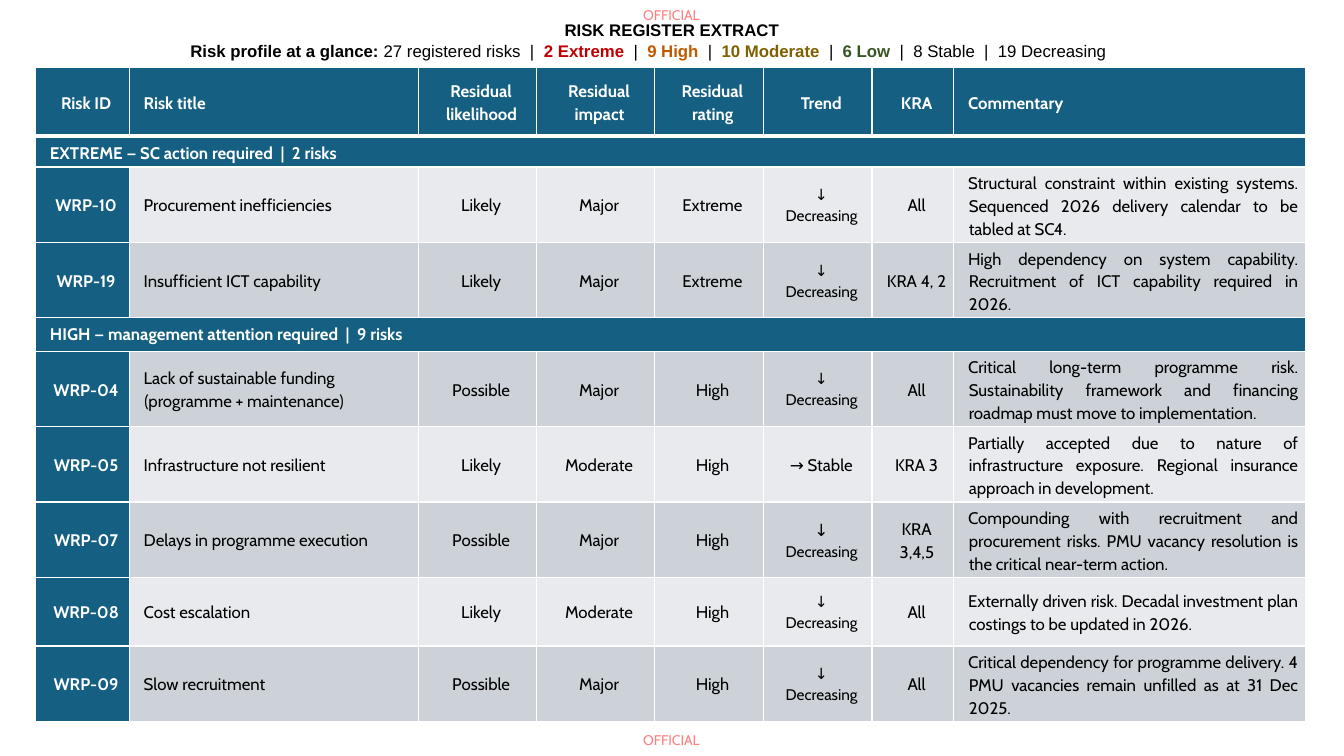
from lxml import etree
from pptx import Presentation
from pptx.dml.color import RGBColor
from pptx.enum import text as t
from pptx.oxml import ns
from pptx.util import Pt

TEAL, PALE, GREY = "156082", "E8EAED", "CCD2D8"
WHITE, BLACK = "FFFFFF", "000000"
MID, LEFT, FULL = t.PP_ALIGN.CENTER, t.PP_ALIGN.LEFT, t.PP_ALIGN.JUSTIFY

WIDTHS = [67, 206.6, 84.2, 84.2, 77.8, 77.8, 58.3, 251.3]
DOWN = "↓ Decreasing"
ROWS = [
    ["Risk ID", "Risk title", "Residual likelihood", "Residual impact",
     "Residual rating", "Trend", "KRA", "Commentary"],
    ["EXTREME — SC action required  |  2 risks"],
    ["WRP-10", "Procurement inefficiencies", "Likely", "Major", "Extreme", DOWN, "All",
     "Structural constraint within existing systems. Sequenced 2026 delivery calendar "
     "to be tabled at SC4."],
    ["WRP-19", "Insufficient ICT capability", "Likely", "Major", "Extreme", DOWN, "KRA 4, 2",
     "High dependency on system capability. Recruitment of ICT capability required in 2026."],
    ["HIGH — management attention required  |  9 risks"],
    ["WRP-04", "Lack of sustainable funding (programme + maintenance)", "Possible", "Major",
     "High", DOWN, "All",
     "Critical long-term programme risk. Sustainability framework and financing roadmap "
     "must move to implementation."],
    ["WRP-05", "Infrastructure not resilient", "Likely", "Moderate", "High", "→ Stable", "KRA 3",
     "Partially accepted due to nature of infrastructure exposure. Regional insurance "
     "approach in development."],
    ["WRP-07", "Delays in programme execution", "Possible", "Major", "High", DOWN, "KRA 3,4,5",
     "Compounding with recruitment and procurement risks. PMU vacancy resolution is the "
     "critical near-term action."],
    ["WRP-08", "Cost escalation", "Likely", "Moderate", "High", DOWN, "All",
     "Externally driven risk. Decadal investment plan costings to be updated in 2026."],
    ["WRP-09", "Slow recruitment", "Possible", "Major", "High", DOWN, "All",
     "Critical dependency for programme delivery. 4 PMU vacancies remain unfilled as at "
     "31 Dec 2025."],
]
BANDS = {1: 21.6, 4: 23.8}
PROFILE = [
    ("Risk profile at a glance: ", BLACK, True),
    ("27 registered risks  |  ", BLACK, False),
    ("2 Extreme  ", "C00000", True), ("|  ", BLACK, False),
    ("9 High  ", "C05A00", True), ("|  ", BLACK, False),
    ("10 Moderate  ", "7F6000", True), ("|  ", BLACK, False),
    ("6 Low  ", "375623", True),
    ("|  8 Stable  |  19 Decreasing", BLACK, False),
]


def hue(code):
    return RGBColor.from_string(code)


def write(para, words, size=12, font="Cabin", color=BLACK, bold=False, alpha=None):
    run = para.add_run()
    run.text = words
    face = run.font
    face.size, face.name, face.bold = Pt(size), font, bold
    face.color.rgb = hue(color)
    if alpha:
        tint = run._r.find(".//" + ns.qn("a:srgbClr"))
        etree.SubElement(tint, ns.qn("a:alpha"), val=str(alpha * 1000))


class Board:
    def __init__(self, slide):
        self.slide = slide

    def box(self, x, y, w, h, pad=(0, 0), wrap=False):
        frame = self.slide.shapes.add_textbox(Pt(x), Pt(y), Pt(w), Pt(h)).text_frame
        frame.margin_left = frame.margin_right = Pt(pad[0])
        frame.margin_top = frame.margin_bottom = Pt(pad[1])
        frame.word_wrap = wrap
        frame.auto_size = t.MSO_AUTO_SIZE.SHAPE_TO_FIT_TEXT
        return frame

    def mark(self, y):
        frame = self.box(459.4, y, 43.2, 12.2)
        write(frame.paragraphs[0], "OFFICIAL", size=10, color="FF0000", alpha=50)

    def title(self):
        frame = self.box(128.9, 10.8, 702, 36, pad=(7.2, 3.6), wrap=True)
        frame.vertical_anchor = t.MSO_ANCHOR.MIDDLE
        head = frame.paragraphs[0]
        head.alignment = MID
        write(head, "RISK REGISTER EXTRACT", font="Arial", bold=True)
        line = frame.add_paragraph()
        line.alignment = LEFT
        for words, color, bold in PROFILE:
            write(line, words, font="Arial", color=color, bold=bold)

    def edges(self, cell, row):
        props = cell._tc.get_or_add_tcPr()
        for side in "LRTB":
            thick = (row, side) in ((0, "B"), (1, "T"))
            line = etree.SubElement(props, ns.qn("a:ln" + side),
                                    w=str(Pt(3 if thick else 1)))
            fill = etree.SubElement(line, ns.qn("a:solidFill"))
            etree.SubElement(fill, ns.qn("a:srgbClr"), val=WHITE)

    def cell(self, cell, row, col, words):
        band = row in BANDS
        dark = band or row == 0 or col == 0
        cell.margin_left = cell.margin_right = Pt(5)
        cell.margin_top = cell.margin_bottom = Pt(3)
        cell.vertical_anchor = t.MSO_ANCHOR.TOP if band else t.MSO_ANCHOR.MIDDLE
        self.edges(cell, row)
        cell.fill.solid()
        cell.fill.fore_color.rgb = hue(TEAL if dark else GREY if row % 2 else PALE)
        if not words:
            return
        para = cell.text_frame.paragraphs[0]
        props = para._p.get_or_add_pPr()
        props.set("marL", str(Pt(5.8)))
        props.set("indent", str(Pt(-0.5)))
        para.alignment = FULL if band or col in (1, 7) else MID
        if words.startswith("Lack"):
            para.alignment = LEFT
        para.line_spacing = 1.11
        para.space_after = Pt(0.2)
        if row == 7 and words == DOWN:
            write(para, "↓ ")
            write(para, "Decreasing", size=11)
        else:
            small = words in (DOWN, "→ Stable")
            write(para, words, size=11 if words == DOWN else 12 if not small else 12,
                  color=WHITE if dark else BLACK, bold=dark)

    def table(self):
        frame = self.slide.shapes.add_table(len(ROWS), len(WIDTHS), Pt(25.4), Pt(48.4),
                                            Pt(sum(WIDTHS)), Pt(462))
        grid = frame.table
        grid.first_row = grid.horz_banding = False
        for col, width in zip(grid.columns, WIDTHS):
            col.width = Pt(width)
        for r, texts in enumerate(ROWS):
            grid.rows[r].height = Pt(BANDS.get(r, 49))
            for c in range(len(WIDTHS)):
                self.cell(grid.cell(r, c), r, c, texts[c] if c < len(texts) else "")
            if r in BANDS:
                grid.cell(r, 0).merge(grid.cell(r, len(WIDTHS) - 1))


def main():
    deck = Presentation()
    deck.slide_width, deck.slide_height = Pt(960), Pt(540)
    board = Board(deck.slides.add_slide(deck.slide_layouts[6]))
    board.mark(5)
    board.mark(522.7)
    board.table()
    board.title()
    deck.save("out.pptx")


if __name__ == "__main__":
    main()
